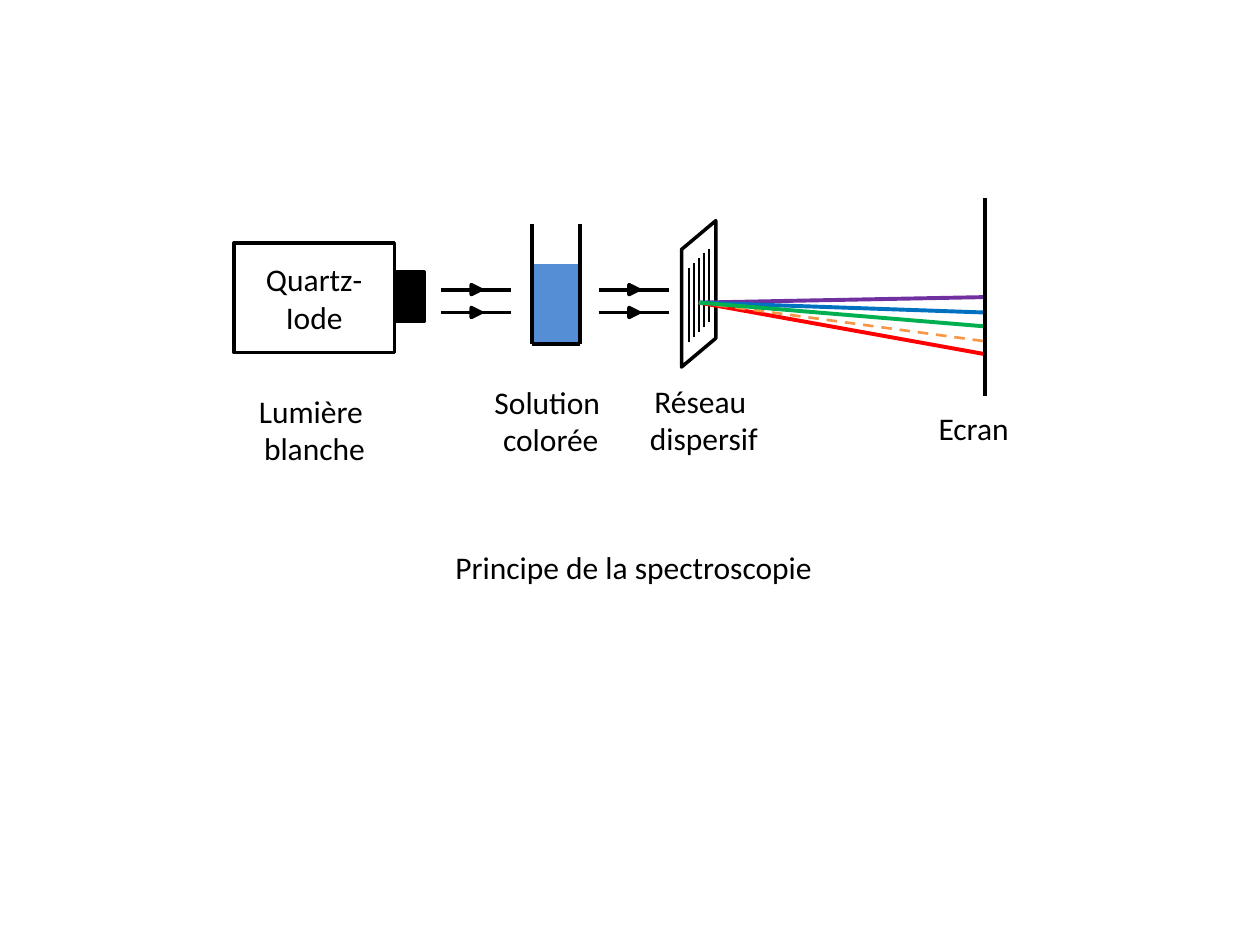
from lxml import etree
from pptx import Presentation
from pptx.dml.color import RGBColor
from pptx.enum import dml, shapes, text
from pptx.oxml import ns
from pptx.util import Cm, Pt

COLORS = {
    "ink": "000000", "liquid": "558ED5", "red": "FF0000", "violet": "7030A0",
    "blue": "0070C0", "orange": "F79646", "green": "00B050",
}


def rgb(name):
    """Return the named colour."""
    return RGBColor.from_string(COLORS[name])


def write(sp, content, size=18, color="ink", align=text.PP_ALIGN.CENTER,
          anchor=text.MSO_ANCHOR.TOP):
    """Fill a shape with one paragraph for each line of content."""
    tf = sp.text_frame
    tf.word_wrap = True
    tf.auto_size = text.MSO_AUTO_SIZE.NONE
    tf.vertical_anchor = anchor
    tf.text = content
    for p in tf.paragraphs:
        p.alignment = align
        for r in p.runs:
            r.font.name = "Calibri"
            r.font.size = Pt(size)
            r.font.color.rgb = rgb(color)


def label(s, content, x, y, w, h=1.8, **fmt):
    """Add a text box."""
    write(s.shapes.add_textbox(Cm(x), Cm(y), Cm(w), Cm(h)), content, **fmt)


def style(sp, fill=None, line="ink"):
    """Give a shape its fill and outline, without shadow."""
    sp.shadow.inherit = False
    if fill:
        sp.fill.solid()
        sp.fill.fore_color.rgb = rgb(fill)
    else:
        sp.fill.background()
    if line:
        sp.line.color.rgb = rgb(line)
        sp.line.width = Pt(2)
    else:
        sp.line.fill.background()
    return sp


def block(s, kind, x, y, w, h, **look):
    """Add a preset shape."""
    return style(s.shapes.add_shape(kind, Cm(x), Cm(y), Cm(w), Cm(h)), **look)


def line(s, x1, y1, x2, y2, color="ink", width=2.25, dash=None):
    """Add a straight line."""
    c = s.shapes.add_connector(shapes.MSO_CONNECTOR.STRAIGHT,
                               Cm(x1), Cm(y1), Cm(x2), Cm(y2))
    c.line.color.rgb = rgb(color)
    c.line.width = Pt(width)
    if dash:
        c.line.dash_style = dash
    etree.SubElement(c._element.spPr, ns.qn("a:effectLst"))


def lamp(s, x, y, w, h):
    """Draw the lamp with its outlet on the right."""
    box = block(s, shapes.MSO_SHAPE.RECTANGLE, x, y, w, h)
    write(box, "Quartz-Iode", anchor=text.MSO_ANCHOR.MIDDLE)
    block(s, shapes.MSO_SHAPE.RECTANGLE, x + w, y + 0.58, 0.6, 1, fill="ink")
    label(s, "Lumière \nblanche", x - 0.78, y + 2.87, 4.8)


def beam(s, x, y, w, gap):
    """Draw two parallel rays with a mark at mid-length."""
    side = 0.2
    for ray_y in (y, y + gap):
        line(s, x, ray_y, x + w, ray_y)
        tip = block(s, shapes.MSO_SHAPE.ISOSCELES_TRIANGLE, x + w / 2 - side / 2,
                    ray_y - side / 2, side, side, fill="ink")
        tip.rotation = 90


def cuvette(s, x, y, w, h):
    """Draw the open vessel, two thirds full."""
    depth = h * 2 / 3
    block(s, shapes.MSO_SHAPE.RECTANGLE, x, y + h - depth, w, depth,
          fill="liquid", line=None)
    line(s, x, y + h, x + w, y + h)
    for wall in (x, x + w):
        line(s, wall, y, wall, y + h)
    label(s, "Solution \ncolorée", x - 2.41, y + 3.07, 5.59)


def grating(s, x, y, w, h):
    """Draw the slanted plate and its slits."""
    slant = 0.58
    fb = s.shapes.build_freeform(Cm(x), Cm(y + slant))
    fb.add_line_segments([(Cm(x + w), Cm(y)), (Cm(x + w), Cm(y + h - slant)),
                          (Cm(x), Cm(y + h))], close=True)
    style(fb.convert_to_shape())
    for i in range(5):
        slit_x, top = x + 0.15 + 0.1 * i, y + 0.96 - 0.1 * i
        line(s, slit_x, top, slit_x, top + 1.48, width=0.75)
    label(s, "Réseau \ndispersif", x - 0.96, y + 3.12, 2.82, 2.57)


def spectrum(s, x, y, w):
    """Draw the coloured rays fanning out from one point."""
    rays = [("red", 1.04), ("violet", -0.11), ("blue", 0.2),
            ("orange", 0.78), ("green", 0.48)]
    for color, drop in rays:
        look = {}
        if color == "orange":
            look = {"width": 1.5, "dash": dml.MSO_LINE.DASH}
        line(s, x, y, x + w, y + drop, color, **look)


def screen(s, x, y, h):
    """Draw the screen and its label."""
    line(s, x, y, x, y + h)
    label(s, "Ecran", x - 1.19, y + h + 0.15, 2.39, align=text.PP_ALIGN.LEFT)


def caption(s, x, y, w, h):
    """Place the title under the diagram."""
    sp = s.shapes.title
    sp.left, sp.top, sp.width, sp.height = Cm(x), Cm(y), Cm(w), Cm(h)
    write(sp, "Principe de la spectroscopie")


def main():
    """Build and save the slide."""
    prs = Presentation()
    prs.slide_width, prs.slide_height = Cm(25.4), Cm(19.05)
    s = prs.slides.add_slide(prs.slide_layouts[5])
    lamp(s, 4.72, 4.9, 3.23, 2.21)
    for x in (8.89, 12.07):
        beam(s, x, 5.84, 1.42, 0.46)
    cuvette(s, 10.72, 4.52, 0.98, 2.41)
    grating(s, 13.74, 4.45, 0.69, 2.95)
    spectrum(s, 14.09, 6.1, 5.77)
    screen(s, 19.86, 3.99, 3.99)
    caption(s, 5.69, 10.92, 14.17, 1.02)
    prs.save("out.pptx")


if __name__ == "__main__":
    main()
